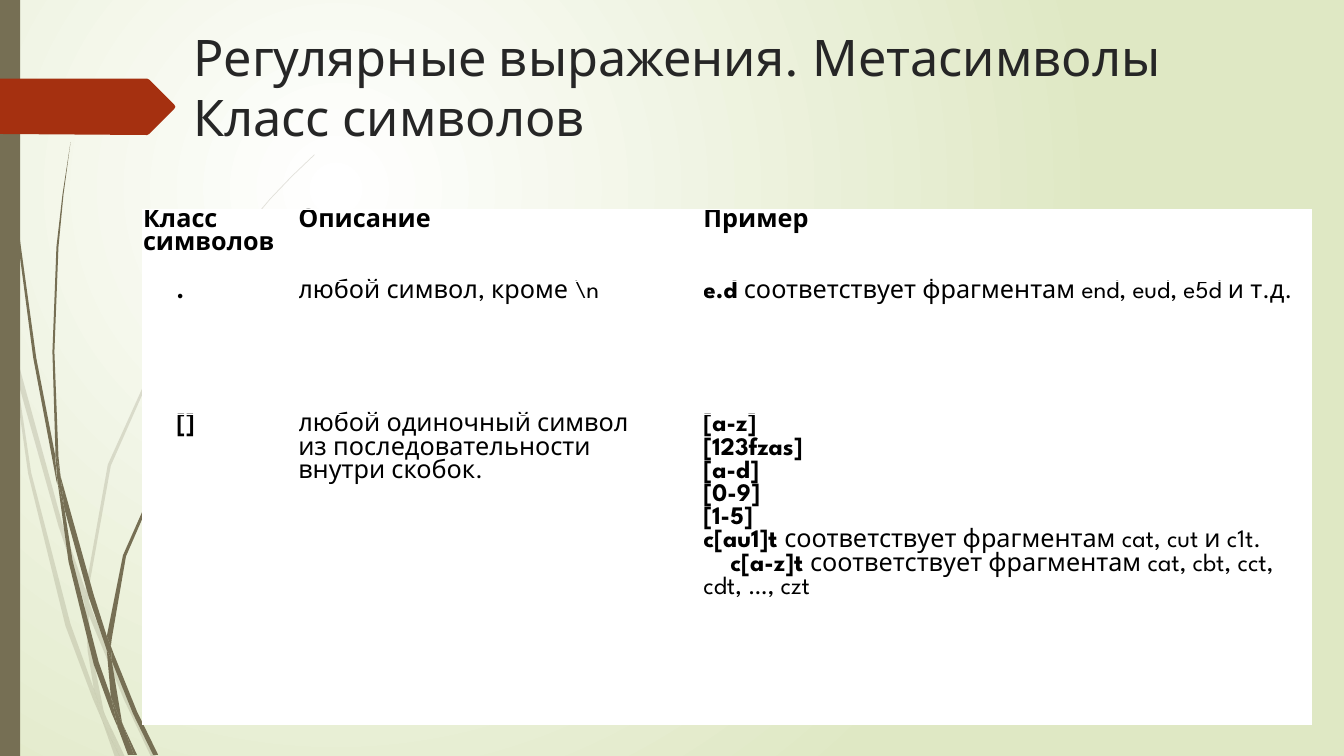
from dataclasses import dataclass

from lxml.etree import SubElement
from pptx import Presentation
from pptx.dml.color import RGBColor as RGB
from pptx.enum.shapes import MSO_SHAPE as Shape
from pptx.enum.text import MSO_ANCHOR as Anchor
from pptx.oxml.ns import qn
from pptx.util import Pt


@dataclass(frozen=True)
class Theme:
    font: str = "League Spartan"
    title_size: int = 36
    title_pitch: int = 43
    body_size: int = 18
    title: RGB = RGB(0x26, 0x26, 0x26)
    black: RGB = RGB(0, 0, 0)
    white: RGB = RGB(0xFF, 0xFF, 0xFF)
    green: RGB = RGB(0xDF, 0xE8, 0xC4)
    olive: RGB = RGB(0x76, 0x6F, 0x54)
    red: RGB = RGB(0xA5, 0x30, 0x10)
    pale_alpha: int = 20


GRID = 0.72

PALE_GRASS = [
    [(11, 350), (9, 322), (0, 282), (0, 299), (10, 344)],
    [(58, 522), (84, 599), (85, 586), (62, 520), (14, 345), (17, 376)],
    [(92, 607), (88, 596), (88, 610), (123, 694), (150, 751), (155, 751), (127, 692)],
    [(119, 751), (124, 751), (105, 711)],
    [(93, 683), (70, 619), (31, 469), (17, 376), (11, 350), (28, 470), (65, 621),
     (92, 693), (101, 714), (99, 707)],
    [(84, 599), (87, 646), (93, 683), (96, 692), (105, 711), (103, 706), (91, 646),
     (88, 610), (88, 608)],
    [(88, 584), (110, 462), (160, 349), (229, 245), (268, 198), (290, 175), (312, 154),
     (312, 153), (289, 175), (268, 197), (228, 244), (158, 348), (107, 461), (85, 584),
     (85, 586), (88, 596)],
    [(101, 714), (114, 751), (119, 751)],
    [(88, 608), (88, 610), (88, 596), (85, 586), (84, 599)],
    [(96, 692), (93, 683), (99, 707), (101, 714), (119, 751), (105, 711)],
]

DARK_GRASS = [
    [(7, 110), (17, 233), (33, 355), (56, 477), (57, 481), (55, 457), (55, 453),
     (36, 355), (19, 232), (8, 109), (5, 48), (4, 0), (3, 0), (4, 48)],
    [(88, 592), (106, 645), (106, 633), (106, 631), (93, 590), (60, 472), (64, 505)],
    [(113, 649), (110, 641), (111, 656), (132, 708), (152, 749), (157, 749), (136, 706)],
    [(110, 691), (98, 657), (72, 556), (64, 505), (57, 477), (68, 557), (93, 659),
     (111, 708), (117, 722), (116, 717)],
    [(60, 472), (58, 453), (54, 349), (58, 245), (63, 193), (70, 141), (62, 193),
     (56, 245), (52, 349), (55, 449)],
    [(133, 749), (136, 749), (122, 719)],
    [(57, 477), (64, 505), (60, 472), (55, 449), (55, 453)],
    [(111, 633), (125, 552), (158, 476), (205, 406), (231, 374), (245, 359), (261, 344),
     (260, 344), (245, 358), (231, 373), (204, 405), (156, 474), (122, 551), (106, 631),
     (110, 641)],
    [(117, 722), (127, 749), (131, 749)],
    [(106, 645), (110, 691), (116, 706), (122, 719), (121, 716), (111, 656), (109, 651)],
    [(106, 645), (109, 651), (111, 656), (110, 641), (106, 631), (106, 633)],
    [(116, 706), (110, 691), (116, 717), (117, 722), (130, 749), (133, 749), (122, 719)],
]

TITLE_ARROW = [(0, 78), (146, 78), (148, 79), (173, 104), (174, 106), (173, 108),
               (148, 133), (146, 134), (0, 133)]


@dataclass
class Para:
    bold: str = ""
    plain: str = ""
    left: float = 0
    first: float = 0


COLUMNS = [110.9, 289.4, 434.2]
ROWS = [51.1, 95, 221.8]
CELLS = [
    [[Para("Класс символов")], [Para("Описание")], [Para("Пример")]],
    [[Para(".", left=24)],
     [Para(plain="любой символ, кроме \\n")],
     [Para("e.d", " соответствует фрагментам end, eud, e5d и т.д.")]],
    [[Para("[]", left=24)],
     [Para(plain=line) for line in
      ("любой одиночный символ", "из последовательности", "внутри скобок.")],
     [Para(group) for group in ("[a-z]", "[123fzas]", "[a-d]", "[0-9]", "[1-5]")]
     + [Para("c[au1]t ", "соответствует фрагментам cat, cut и c1t."),
        Para("c[a-z]t ", "соответствует фрагментам cat, cbt, cct, cdt, …, czt", first=19.2)]],
]


class SlideBuilder:
    def __init__(self, slide, theme):
        self.s = slide
        self.theme = theme

    def background(self):
        fill = self.s.background.fill
        fill.gradient()
        for stop, color in zip(fill.gradient_stops, (self.theme.white, self.theme.green)):
            stop.color.rgb = color
        grad = self.s.background._cSld.find(".//" + qn("a:gradFill"))
        grad.remove(grad.find(qn("a:lin")))
        circle = SubElement(grad, qn("a:path"), path="circle")
        SubElement(circle, qn("a:fillToRect"), l="50000", t="50000", r="100000", b="100000")

    def paint(self, sp, color, alpha=None):
        sp.shadow.inherit = False
        sp.line.fill.background()
        sp.fill.solid()
        sp.fill.fore_color.rgb = color
        if alpha is not None:
            rgb = sp._element.spPr.find(".//" + qn("a:srgbClr"))
            SubElement(rgb, qn("a:alpha"), val=str(alpha * 1000))

    def outline(self, points, color, alpha=None):
        start, *rest = points
        builder = self.s.shapes.build_freeform(*start, scale=Pt(GRID))
        builder.add_line_segments(rest, close=True)
        self.paint(builder.convert_to_shape(), color, alpha)

    def rect(self, x, y, w, h, color):
        sp = self.s.shapes.add_shape(Shape.RECTANGLE, Pt(x), Pt(y), Pt(w), Pt(h))
        self.paint(sp, color)

    def style(self, font, size, color):
        font.name = self.theme.font
        font.size = Pt(size)
        font.color.rgb = color

    def title(self, x, y, w, h, text):
        tf = self.s.shapes.add_textbox(Pt(x), Pt(y), Pt(w), Pt(h)).text_frame
        tf.word_wrap = True
        p = tf.paragraphs[0]
        p.text = text
        p.line_spacing = Pt(self.theme.title_pitch)
        self.style(p.font, self.theme.title_size, self.theme.title)

    def cell(self, cell, paras):
        cell.margin_left = cell.margin_right = cell.margin_top = cell.margin_bottom = 0
        cell.vertical_anchor = Anchor.TOP
        cell.fill.solid()
        cell.fill.fore_color.rgb = self.theme.white
        tf = cell.text_frame
        for i, para in enumerate(paras):
            p = tf.add_paragraph() if i else tf.paragraphs[0]
            self.style(p.font, self.theme.body_size, self.theme.black)
            pPr = p._p.get_or_add_pPr()
            pPr.set("marL", str(Pt(para.left)))
            pPr.set("indent", str(Pt(para.first)))
            for text, bold in ((para.bold, True), (para.plain, False)):
                if text:
                    r = p.add_run()
                    r.text = text
                    r.font.bold = bold

    def table(self, x, y, columns, rows, cells):
        table = self.s.shapes.add_table(len(rows), len(columns), Pt(x), Pt(y),
                                        Pt(sum(columns)), Pt(sum(rows))).table
        table.first_row = table.horz_banding = False
        for column, width in zip(table.columns, columns):
            column.width = Pt(width)
        for row, height, contents in zip(table.rows, rows, cells):
            row.height = Pt(height)
            for cell, paras in zip(row.cells, contents):
                self.cell(cell, paras)


def main():
    prs = Presentation()
    prs.slide_width, prs.slide_height = Pt(960), Pt(540)
    theme = Theme()
    b = SlideBuilder(prs.slides.add_slide(prs.slide_layouts[6]), theme)
    b.background()
    for blade in PALE_GRASS:
        b.outline(blade, theme.olive, theme.pale_alpha)
    for blade in DARK_GRASS:
        b.outline(blade, theme.olive)
    b.rect(0, 0, 14.4, 540, theme.olive)
    b.outline(TITLE_ARROW, theme.red)
    b.title(131, 15.1, 747.4, 100.8, "Регулярные выражения. Метасимволы\vКласс символов")
    b.table(102.2, 149.8, COLUMNS, ROWS, CELLS)
    prs.save("out.pptx")


if __name__ == "__main__":
    main()
